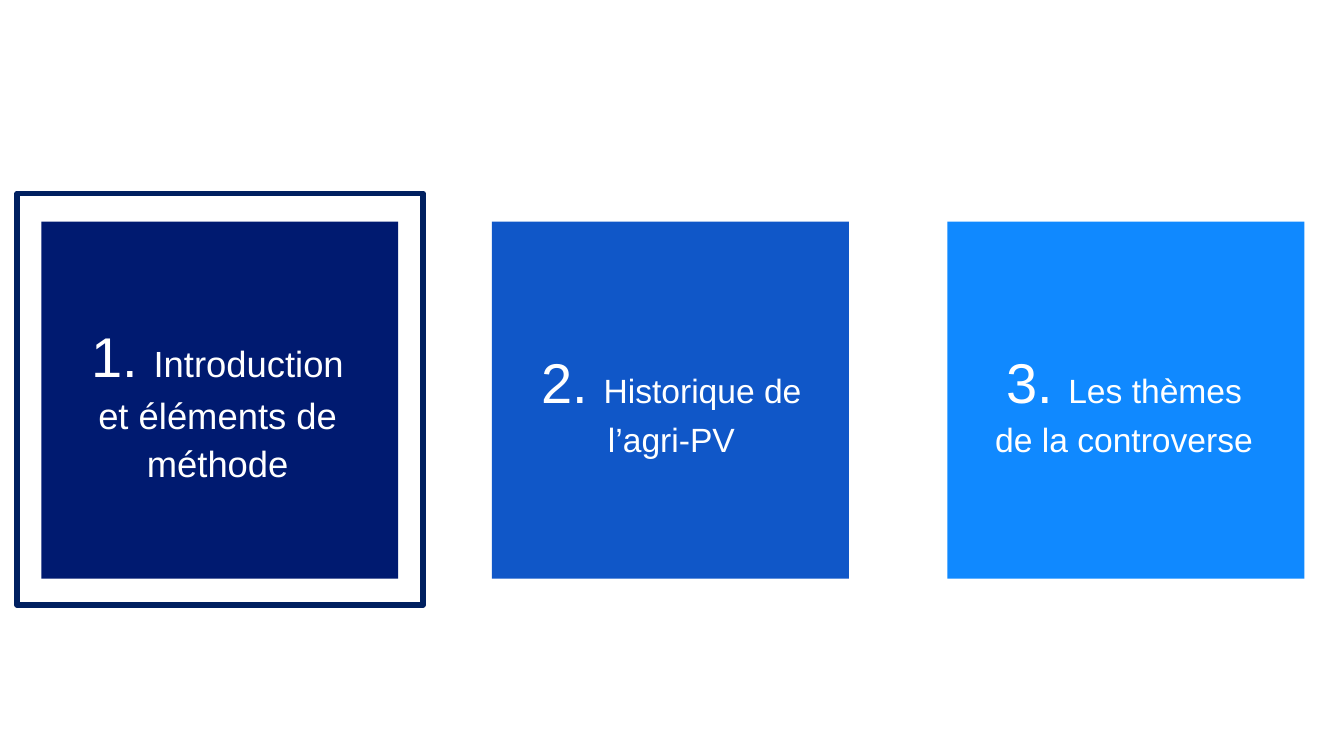
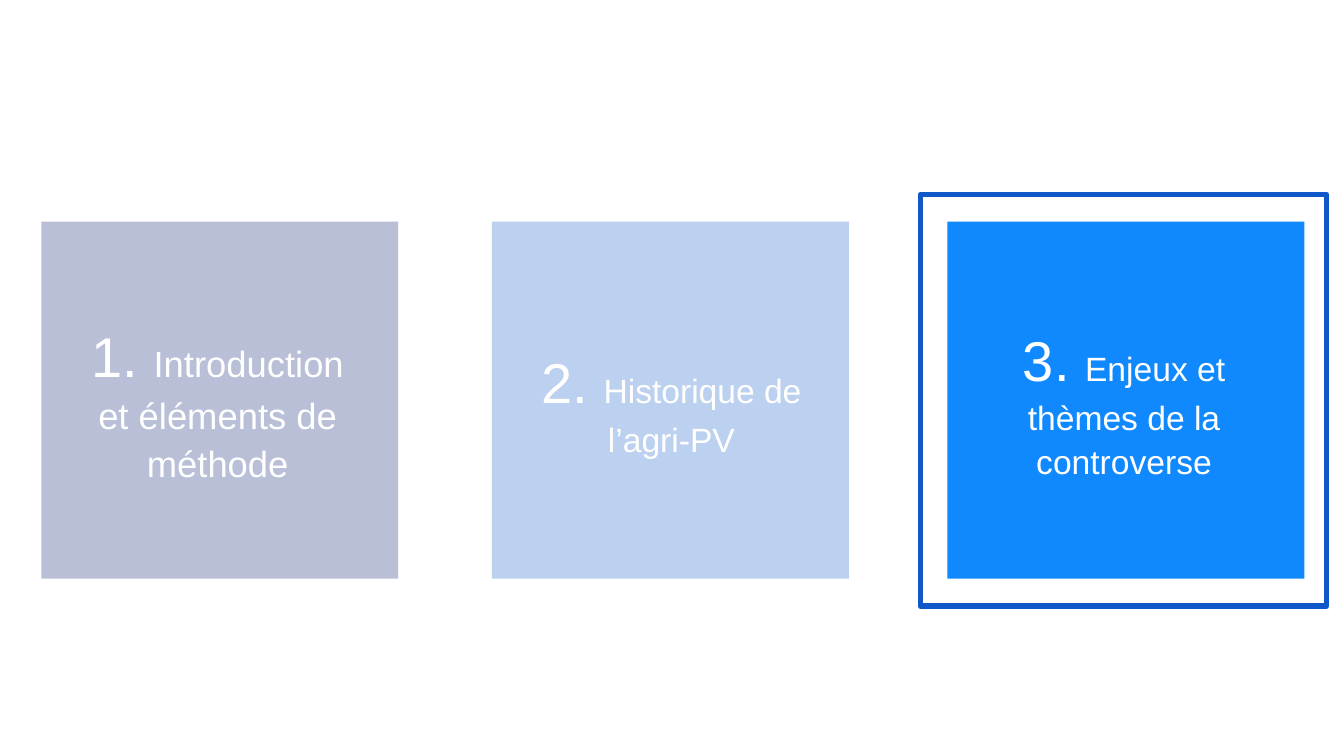
from collections import namedtuple

from lxml.etree import SubElement
from pptx import Presentation
from pptx.dml.color import RGBColor
from pptx.enum.shapes import MSO_SHAPE as Shape
from pptx.enum.text import MSO_ANCHOR as Anchor, PP_ALIGN as Align
from pptx.oxml.ns import qn
from pptx.util import Pt

Box = namedtuple("Box", "left top width height")
Chapter = namedtuple("Chapter", "left text_shift color size")

FONT = "Arial"
WHITE, NAVY, BLUE = "FFFFFF", "002060", "1057C8"
TILE_TOP, TILE_SIDE = 158.4, 255
CHAPTERS = [
    Chapter(29.5, -1.4, "001A70", 26),
    Chapter(351.4, 0.7, BLUE, 24),
    Chapter(676.8, -1.4, "1089FF", 24),
]
FIRST_TITLES = ["Introduction et éléments de méthode", "Historique de l’agri-PV"]


def rgb(color):
    return RGBColor.from_string(color)


def add_rectangle(page, box, fill=None, line=None):
    rectangle = page.shapes.add_shape(Shape.RECTANGLE, *map(Pt, box))
    rectangle.shadow.inherit = False
    if fill:
        rectangle.fill.solid()
        rectangle.fill.fore_color.rgb = rgb(fill)
    else:
        rectangle.fill.background()
    if line:
        rectangle.line.color.rgb = rgb(line)
        rectangle.line.width = Pt(4)
    else:
        rectangle.line.fill.background()
    return rectangle


def add_label(page, box, number, title, size):
    label = page.shapes.add_textbox(*map(Pt, box))
    frame = label.text_frame
    frame.word_wrap = True
    frame.vertical_anchor = Anchor.MIDDLE
    frame.margin_left = frame.margin_right = Pt(28)
    frame.margin_top = frame.margin_bottom = Pt(3.6)
    para = frame.paragraphs[0]
    para.alignment = Align.CENTER
    para.line_spacing = 1.1
    para.space_before = Pt(10)
    for text, points in ((f"{number}. ", 40), (title, size)):
        span = para.add_run()
        span.text = text
        span.font.name = FONT
        span.font.size = Pt(points)
        span.font.color.rgb = rgb(WHITE)


def add_veil(page, box, opacity):
    veil = add_rectangle(page, box, fill=WHITE)
    color = veil.fill._xPr.find(qn("a:solidFill")).find(qn("a:srgbClr"))
    SubElement(color, qn("a:alpha")).set("val", str(opacity * 1000))


def add_agenda(deck, titles, frame_box, frame_color, veil_box=None):
    page = deck.slides.add_slide(deck.slide_layouts[6])
    tiles = [Box(chapter.left, TILE_TOP, TILE_SIDE, TILE_SIDE) for chapter in CHAPTERS]
    for tile, chapter in zip(tiles, CHAPTERS):
        add_rectangle(page, tile, fill=chapter.color)
    for number, (tile, chapter, title) in enumerate(zip(tiles, CHAPTERS, titles), 1):
        text_box = tile._replace(left=tile.left + chapter.text_shift)
        add_label(page, text_box, number, title, chapter.size)
    if veil_box:
        add_veil(page, veil_box, 72)
    add_rectangle(page, frame_box, line=frame_color)


def main():
    deck = Presentation()
    deck.slide_width, deck.slide_height = Pt(960), Pt(540)
    add_agenda(deck, FIRST_TITLES + ["Les thèmes de la controverse"],
               Box(12.2, 138.2, 290, 294), NAVY)
    add_agenda(deck, FIRST_TITLES + ["Enjeux et thèmes de la controverse"],
               Box(657.4, 139, 290, 294), BLUE, Box(0, 119.5, 628.6, 313.2))
    deck.save("out.pptx")


if __name__ == "__main__":
    main()
